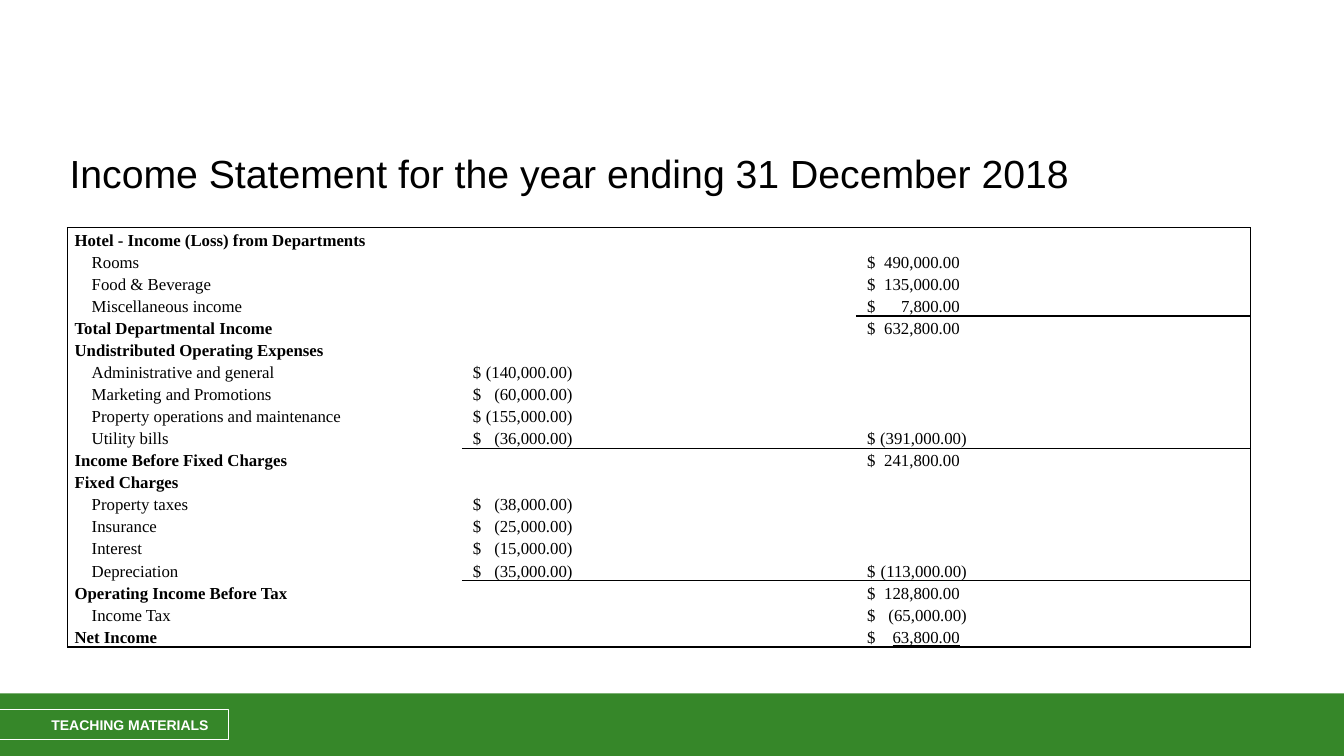
from dataclasses import dataclass

from lxml.etree import SubElement
from pptx import Presentation
from pptx.dml.color import RGBColor
from pptx.enum.shapes import MSO_SHAPE as SHAPE
from pptx.enum.text import MSO_ANCHOR as ANCHOR, MSO_AUTO_SIZE as AUTO_SIZE, PP_ALIGN as ALIGN
from pptx.oxml.ns import qn
from pptx.util import Inches, Pt


@dataclass(frozen=True)
class Theme:
    green = RGBColor(0x36, 0x87, 0x29)
    white = RGBColor(0xFF, 0xFF, 0xFF)
    black = RGBColor(0, 0, 0)
    sans = "Arial"
    serif = "Times New Roman"
    title = Pt(28)
    body = Pt(12)
    tag = Pt(10)


def style(r, size, name, color, bold=False):
    r.font.size, r.font.name, r.font.bold = size, name, bold
    r.font.color.rgb = color


def add_borders(cell, sides):
    """Draw 1 pt lines on the given sides (letters of "LRTB"), none on the rest."""
    tcPr = cell._tc.get_or_add_tcPr()
    for side in "LRTB":
        ln = SubElement(tcPr, qn(f"a:ln{side}"), w=str(Pt(1)))
        if side in sides:
            fill = SubElement(ln, qn("a:solidFill"))
            SubElement(fill, qn("a:srgbClr"), val=str(Theme.black))
        else:
            SubElement(ln, qn("a:noFill"))


# label, expense, total; lines without an indent are headings
STATEMENT = [
    ("Hotel - Income (Loss) from Departments", None, None),
    ("Rooms", None, 490000),
    ("Food & Beverage", None, 135000),
    ("Miscellaneous income", None, 7800),
    ("Total Departmental Income", None, 632800),
    ("Undistributed Operating Expenses", None, None),
    ("Administrative and general", -140000, None),
    ("Marketing and Promotions", -60000, None),
    ("Property operations and maintenance", -155000, None),
    ("Utility bills", -36000, -391000),
    ("Income Before Fixed Charges", None, 241800),
    ("Fixed Charges", None, None),
    ("Property taxes", -38000, None),
    ("Insurance", -25000, None),
    ("Interest", -15000, None),
    ("Depreciation", -35000, -113000),
    ("Operating Income Before Tax", None, 128800),
    ("Income Tax", None, -65000),
    ("Net Income", None, 63800),
]
HEADINGS = {
    "Hotel - Income (Loss) from Departments", "Total Departmental Income",
    "Undistributed Operating Expenses", "Income Before Fixed Charges",
    "Fixed Charges", "Operating Income Before Tax", "Net Income",
}
RULED = {"Miscellaneous income", "Utility bills", "Depreciation"}

prs = Presentation()
prs.slide_width, prs.slide_height = Inches(13.33), Inches(7.5)
s = prs.slides.add_slide(prs.slide_layouts[5])

# Footer
bar = s.shapes.add_shape(SHAPE.RECTANGLE, 0, Inches(6.88), Inches(13.33), Inches(0.62))
bar.shadow.inherit = False
bar.fill.solid()
bar.fill.fore_color.rgb = Theme.green
bar.line.fill.background()

tag = s.shapes.add_shape(SHAPE.RECTANGLE, Inches(-0.28), Inches(7.04), Inches(2.55), Inches(0.3))
tag.shadow.inherit = False
tag.fill.background()
tag.line.color.rgb = Theme.white
tag.line.width = Pt(0.75)
tf = tag.text_frame
tf.margin_left = Inches(0.79)
tf.vertical_anchor = ANCHOR.MIDDLE
tf.text = "TEACHING MATERIALS"
tf.paragraphs[0].alignment = ALIGN.LEFT
style(tf.paragraphs[0].runs[0], Theme.tag, Theme.sans, Theme.white, bold=True)

# Title
title = s.shapes.title
title.left, title.top, title.width, title.height = (
    Inches(0.59), Inches(1.43), Inches(11.81), Inches(0.6))
tf = title.text_frame
tf.auto_size = AUTO_SIZE.NONE
tf.vertical_anchor = ANCHOR.TOP
tf.text = "Income Statement for the year ending 31 December 2018"
tf.paragraphs[0].alignment = ALIGN.LEFT
style(tf.paragraphs[0].runs[0], Theme.title, Theme.sans, Theme.black)

# Income statement, below one empty merged row
rows = [(None, None, None)] + STATEMENT
frame = s.shapes.add_table(len(rows), 3, Inches(0.67), Inches(2.04), Inches(11.73), Inches(4.38))
table = frame.table
table.first_row = table.horz_banding = False
table._tbl.tblPr.find(qn("a:tableStyleId")).text = "{2D5ABB26-0587-4C30-8999-92F81FD0307C}"
last = len(rows) - 1

for i, row in enumerate(rows):
    label = row[0]
    for j, value in enumerate(row):
        cell = table.cell(i, j)
        cell.vertical_anchor = ANCHOR.BOTTOM
        cell.margin_left = Inches(0.11 if j else 0.07)
        cell.margin_right = Inches(0.07)
        cell.margin_top = cell.margin_bottom = 0

        sides = ""
        if i and j == 0:
            sides += "L"
        if i and j == 2:
            sides += "R"
        if i == 1 or (j and rows[i - 1][0] in RULED and rows[i - 1][j]):
            sides += "T"
        if i in (0, last) or (j and label in RULED and value):
            sides += "B"
        add_borders(cell, sides)
        cell.fill.background()

        p = cell.text_frame.paragraphs[0]
        if value is None:
            SubElement(p._p, qn("a:endParaRPr"), sz=str(int(Theme.body.pt * 100)))
            continue
        p.line_spacing = 1.07
        p.space_after = Pt(8)
        pPr = p._p.get_or_add_pPr()
        if j == 0:
            texts = [label]
            if label not in HEADINGS:
                pPr.set("marL", str(Inches(0.17)))
        else:
            amount = f"{value:,.2f}" if value > 0 else f"({-value:,.2f})"
            texts = ["$\t", amount]
            tabs = SubElement(pPr, qn("a:tabLst"))
            stop = Inches(0.92 if value > 0 else 0.99)
            SubElement(tabs, qn("a:tab"), pos=str(stop), algn="r")
        for text in texts:
            r = p.add_run()
            r.text = text
            style(r, Theme.body, Theme.serif, Theme.black, bold=j == 0 and label in HEADINGS)
        if j and i == last:
            r.font.underline = True

table.cell(0, 0).merge(table.cell(0, 2))

prs.save("out.pptx")
